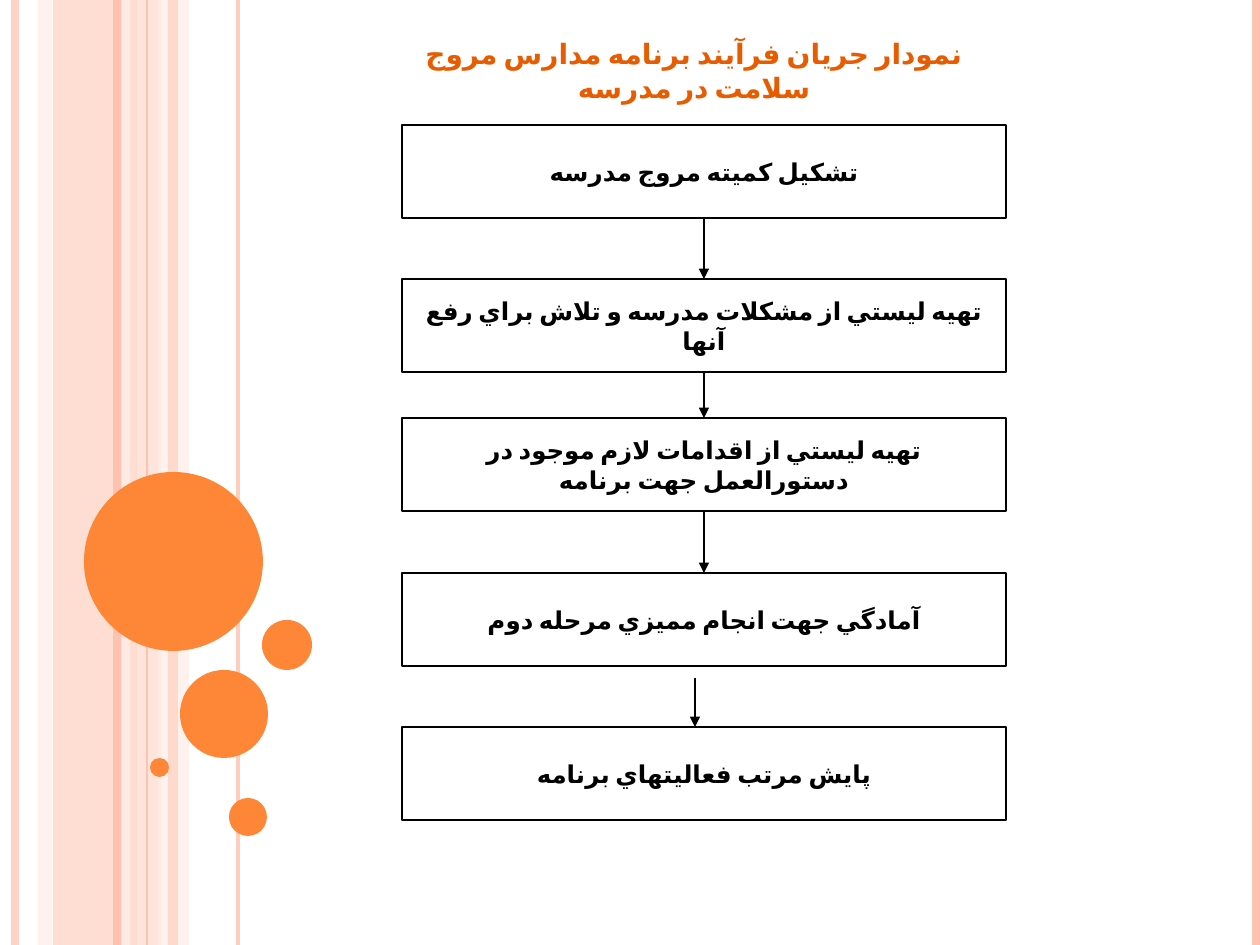
from dataclasses import dataclass
from itertools import pairwise

from lxml.etree import SubElement
from pptx import Presentation
from pptx.dml.color import RGBColor
from pptx.enum.lang import MSO_LANGUAGE_ID
from pptx.enum.shapes import MSO_CONNECTOR, MSO_SHAPE
from pptx.enum.text import MSO_ANCHOR, PP_ALIGN
from pptx.oxml.ns import qn
from pptx.util import Emu, Pt

EMU_PER_PX = 914400 / 126
SLIDE_W, SLIDE_H = 1260, 945


@dataclass(frozen=True)
class Theme:
    font: str = "Calibri"
    title_size: int = 16
    step_size: int = 14
    title: str = "E75C01"
    ink: str = "000000"
    paper: str = "FFFFFF"
    circle: str = "FE8637"
    peach: str = "FEC3AE"
    blush: str = "FFD9CE"
    mist: str = "FFEDE8"
    outline: float = 0.75


THEME = Theme()

TITLE = "نمودار جريان فرآيند برنامه مدارس مروج سلامت در مدرسه"

# left, width, colour, opacity in percent
BANDS = [
    (53, 84, THEME.peach, 54),
    (38, 14, THEME.blush, 36),
    (136, 25, THEME.blush, 70),
    (158, 31, THEME.mist, 71),
]
FRONT_BAND = (168, 10, THEME.peach, 51)

# x, colour, width in points, opacity in percent
STRIPES = [
    (15, THEME.peach, 4.5, 73),
    (126, THEME.mist, 4.5, 83),
    (117, THEME.peach, 4.5, 100),
    (238, THEME.peach, 2.25, 82),
    (147, THEME.peach, 0.75, 100),
    (1256, THEME.peach, 4.5, 100),
]

# left, top, diameter
CIRCLES = [
    (84, 472, 179),
    (180, 670, 88),
    (150, 758, 19),
    (229, 798, 38),
    (262, 620, 50),
]

STEP_LEFT, STEP_W, STEP_H = 402, 604, 93
STEPS = [
    (125, "تشکيل کميته مروج مدرسه"),
    (279, "تهيه ليستي از مشکلات مدرسه و تلاش براي رفع آنها"),
    (418, "تهيه ليستي از اقدامات لازم موجود در دستورالعمل جهت برنامه"),
    (573, "آمادگي جهت انجام مميزي مرحله دوم"),
    (727, "پايش مرتب فعاليتهاي برنامه"),
]
LAST_ARROW_X, LAST_ARROW_TOP = 695, 678


def px(length):
    return Emu(round(length * EMU_PER_PX))


def set_opacity(fill, percent):
    if percent < 100:
        colour = fill._xPr.find(qn("a:solidFill"))[0]
        SubElement(colour, qn("a:alpha")).set("val", str(percent * 1000))


def write_text(shape, text, *, size, color, rtl=False):
    frame = shape.text_frame
    frame.word_wrap = True
    frame.vertical_anchor = MSO_ANCHOR.MIDDLE
    paragraph = frame.paragraphs[0]
    paragraph.alignment = PP_ALIGN.CENTER
    if rtl:
        paragraph._p.get_or_add_pPr().set("rtl", "1")
    run = paragraph.add_run()
    run.text = text
    run.font.name = THEME.font
    run.font.size = Pt(size)
    run.font.bold = True
    run.font.language_id = MSO_LANGUAGE_ID.FARSI
    run.font.color.rgb = RGBColor.from_string(color)
    # Arabic script takes its typeface from the complex-script slot.
    SubElement(run._r.get_or_add_rPr(), qn("a:cs")).set("typeface", THEME.font)


def add_filled(slide, preset, left, top, width, height, color, opacity=100):
    shape = slide.shapes.add_shape(preset, px(left), px(top), px(width), px(height))
    shape.shadow.inherit = False
    shape.fill.solid()
    shape.fill.fore_color.rgb = RGBColor.from_string(color)
    set_opacity(shape.fill, opacity)
    shape.line.fill.background()
    return shape


def add_band(slide, left, width, color, opacity):
    add_filled(slide, MSO_SHAPE.RECTANGLE, left, 0, width, SLIDE_H, color, opacity)


def add_line(slide, start, end, color, width, opacity=100):
    line = slide.shapes.add_connector(
        MSO_CONNECTOR.STRAIGHT, *(px(value) for value in (*start, *end))
    )
    line.line.width = Pt(width)
    line.line.fill.solid()
    line.line.color.rgb = RGBColor.from_string(color)
    set_opacity(line.line.fill, opacity)
    SubElement(line._element.spPr, qn("a:effectLst"))
    return line


def add_arrow(slide, start, end):
    arrow = add_line(slide, start, end, THEME.ink, THEME.outline)
    SubElement(arrow.line._get_or_add_ln(), qn("a:tailEnd")).set("type", "triangle")
    return arrow


def add_step(slide, top, text):
    step = add_filled(
        slide, MSO_SHAPE.RECTANGLE, STEP_LEFT, top, STEP_W, STEP_H, THEME.paper
    )
    step.line.color.rgb = RGBColor.from_string(THEME.ink)
    step.line.width = Pt(THEME.outline)
    write_text(step, text, size=THEME.step_size, color=THEME.ink)
    return step


def add_backdrop(slide):
    for band in BANDS:
        add_band(slide, *band)
    for x, color, width, opacity in STRIPES:
        add_line(slide, (x, 0), (x, SLIDE_H), color, width, opacity)
    add_band(slide, *FRONT_BAND)
    for left, top, diameter in CIRCLES:
        add_filled(slide, MSO_SHAPE.OVAL, left, top, diameter, diameter, THEME.circle)


def add_flow(slide):
    """Stack the steps and join them; the last arrow stands free of its upper step."""
    steps = [add_step(slide, top, text) for top, text in STEPS]
    centre = STEP_LEFT + STEP_W / 2
    tops = [top for top, _ in STEPS]
    for (upper, lower), (upper_top, lower_top) in zip(
        pairwise(steps[:-1]), pairwise(tops[:-1])
    ):
        arrow = add_arrow(slide, (centre, upper_top + STEP_H), (centre, lower_top))
        arrow.begin_connect(upper, 2)
        arrow.end_connect(lower, 0)
    add_arrow(slide, (LAST_ARROW_X, LAST_ARROW_TOP), (LAST_ARROW_X, tops[-1]))


def main():
    presentation = Presentation()
    presentation.slide_width, presentation.slide_height = px(SLIDE_W), px(SLIDE_H)
    slide = presentation.slides.add_slide(presentation.slide_layouts[6])
    add_backdrop(slide)
    title = slide.shapes.add_textbox(px(382), px(30), px(624), px(81))
    write_text(title, TITLE, size=THEME.title_size, color=THEME.title, rtl=True)
    add_flow(slide)
    presentation.save("out.pptx")


if __name__ == "__main__":
    main()
